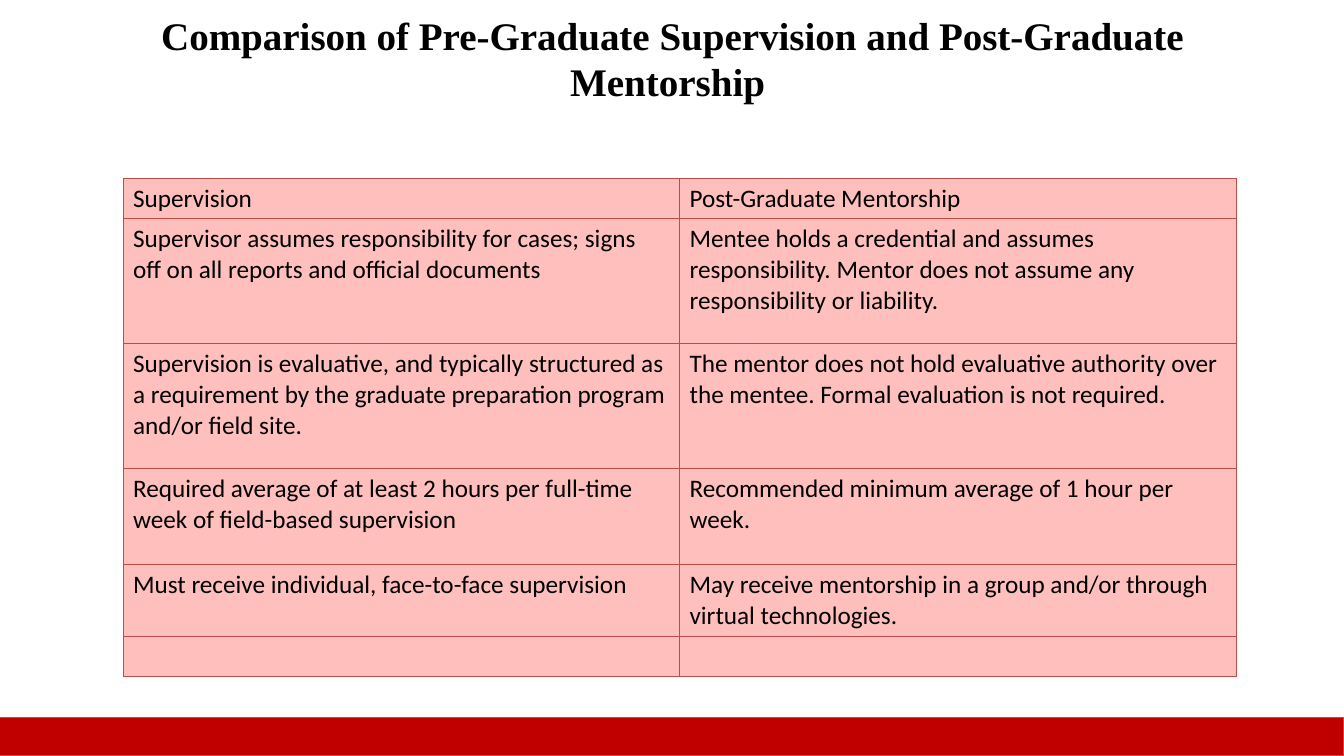
"""Build a slide comparing graduate supervision with post-graduate mentorship."""
from lxml import etree
from pptx import Presentation
from pptx.dml.color import RGBColor
from pptx.enum.shapes import MSO_SHAPE
from pptx.enum.text import MSO_ANCHOR, PP_ALIGN
from pptx.oxml import parse_xml
from pptx.oxml.ns import nsdecls, qn
from pptx.util import Inches, Pt

TITLE = "Comparison of Pre-Graduate Supervision and Post-Graduate Mentorship "
ROWS = [
    (0.4, "Supervision", "Post-Graduate Mentorship"),
    (1.24, "Supervisor assumes responsibility for cases; signs off on all reports and official documents",
     "Mentee holds a credential and assumes responsibility. Mentor does not assume any responsibility or liability."),
    (1.24, "Supervision is evaluative, and typically structured as a requirement by the graduate preparation "
     "program and/or field site.",
     "The mentor does not hold evaluative authority over the mentee. Formal evaluation is not required."),
    (0.95, "Required average of at least 2 hours per full-time week of field-based supervision",
     "Recommended minimum average of 1 hour per week."),
    (0.71, "Must receive individual, face-to-face supervision",
     "May receive mentorship in a group and/or through virtual technologies."),
    (0.4, "", ""),
]
COL_WIDTH = 5.52
BLACK = RGBColor(0x00, 0x00, 0x00)
PINK = RGBColor(0xFF, 0xBF, 0xBD)
RED = RGBColor(0xC0, 0x00, 0x00)
BORDER = RGBColor(0xBF, 0x4C, 0x48)


def add_run(p, text, font, size, bold=False):
    r = p.add_run()
    r.text = text
    r.font.name, r.font.size, r.font.bold = font, Pt(size), bold
    r.font.color.rgb = BLACK


def add_borders(cell):
    tcPr = cell._tc.get_or_add_tcPr()
    for i, side in enumerate(("lnL", "lnR", "lnT", "lnB")):
        ln = etree.Element(qn(f"a:{side}"), w=str(Pt(0.75)))
        fill = etree.SubElement(ln, qn("a:solidFill"))
        etree.SubElement(fill, qn("a:srgbClr"), val=str(BORDER))
        tcPr.insert(i, ln)


def add_title(s):
    tf = s.shapes.add_textbox(Inches(0.67), Inches(0.3), Inches(12), Inches(0.86)).text_frame
    tf.word_wrap = True
    tf.vertical_anchor = MSO_ANCHOR.MIDDLE
    tf.margin_top, tf.margin_bottom = 0, Inches(0.31)
    p = tf.paragraphs[0]
    p.alignment = PP_ALIGN.CENTER
    add_run(p, TITLE, "Times New Roman", 27.9, True)


def add_comparison(s):
    height = sum(row[0] for row in ROWS)
    table = s.shapes.add_table(len(ROWS), 2, Inches(1.22), Inches(1.77),
                               Inches(2 * COL_WIDTH), Inches(height)).table
    table.first_row = table.horz_banding = False
    for column in table.columns:
        column.width = Inches(COL_WIDTH)
    for i, (row_height, *texts) in enumerate(ROWS):
        table.rows[i].height = Inches(row_height)
        for j, text in enumerate(texts):
            cell = table.cell(i, j)
            cell.fill.solid()
            cell.fill.fore_color.rgb = PINK
            add_borders(cell)
            p = cell.text_frame.paragraphs[0]
            if text:
                add_run(p, text, "Calibri", 18)


def add_footer_bar(s):
    bar = s.shapes.add_shape(MSO_SHAPE.RECTANGLE, 0, Inches(7.12), Inches(13.33), Inches(0.38))
    bar.fill.solid()
    bar.fill.fore_color.rgb = RED
    bar.line.color.rgb = BORDER
    bar.line.width = Pt(0.75)
    bar.shadow.inherit = False
    effects = bar._element.spPr.find(qn("a:effectLst"))
    effects.append(parse_xml(
        f'<a:outerShdw {nsdecls("a")} blurRad="{Pt(3.1)}" dist="{Pt(1.8)}" dir="5400000" rotWithShape="0">'
        '<a:srgbClr val="000000"><a:alpha val="35000"/></a:srgbClr></a:outerShdw>'))


def main():
    prs = Presentation()
    prs.slide_width, prs.slide_height = Inches(13.33), Inches(7.5)
    s = prs.slides.add_slide(prs.slide_layouts[6])
    add_title(s)
    add_comparison(s)
    add_footer_bar(s)
    prs.save("out.pptx")


if __name__ == "__main__":
    main()
